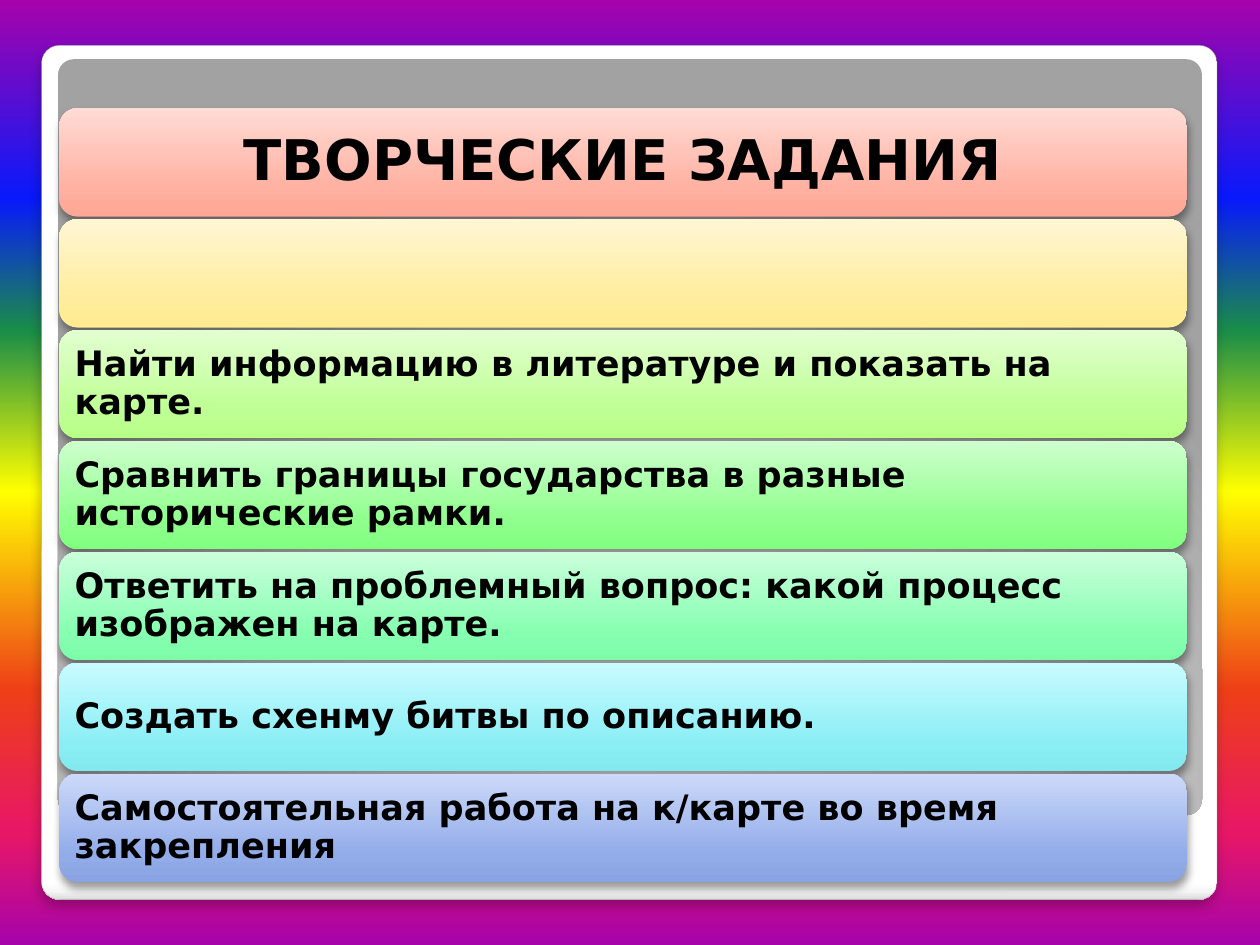
"""Build a slide with a stack of gradient cards listing creative map tasks."""
from lxml.etree import SubElement
from pptx import Presentation
from pptx.dml.color import RGBColor
from pptx.enum.shapes import MSO_SHAPE
from pptx.enum.text import MSO_ANCHOR, PP_ALIGN
from pptx.oxml.ns import qn
from pptx.util import Inches, Pt

WIDTH, HEIGHT = 10, 7.5
COLORS = {"text": "000000", "shadow": "000000", "frame_line": "A4A4A4"}
GRADIENTS = {
    "rainbow": [(0, "A603AB"), (21, "0819FB"), (35, "1A8D48"), (52, "FFFF00"),
                (73, "EE3F17"), (88, "E81766"), (100, "A603AB")],
    "frame": [(0, "FFFFFF"), (98, "FFFFFF"), (99, "F7F7F7"), (100, "DADADA")],
    "panel": [(0, "FFFFFF"), (55, "E1E1E1"), (100, "A2A2A2")],
}
CARDS = [
    ("ТВОРЧЕСКИЕ ЗАДАНИЯ", ("FFA796", "FFB0A0", "FFDCD6")),
    ("", ("FFEB90", "FFED9B", "FFF6D4")),
    ("Найти информацию в литературе и показать на карте.",
     ("B8FF88", "BEFF93", "E2FFD0")),
    ("Сравнить границы государства в разные исторические рамки.",
     ("81FF80", "8EFF8C", "CEFFCD")),
    ("Ответить на проблемный вопрос: какой процесс изображен на карте.",
     ("7CFCA9", "86FFB0", "CBFFDC")),
    ("Создать схенму битвы по описанию.", ("83E8EF", "8BEEF5", "C8FBFF")),
    ("Самостоятельная работа на к/карте во время закрепления",
     ("8AA4E3", "92ACE9", "CCD9F9")),
]
CARD_STOPS = (0, 25, 100)
CARD_LEFT, CARD_TOP, CARD_WIDTH, CARD_HEIGHT = 0.47, 0.86, 8.95, 0.86
CARD_PITCH = 0.88
TITLE = {"size": 32, "inset": 0.13, "align": PP_ALIGN.CENTER}
TASK = {"size": 20, "inset": 0.08, "align": PP_ALIGN.LEFT}
FONT = {"name": "DejaVu Sans", "bold": True}


def set_gradient(fill, element, stops, angle=90, focus=None):
    fill.gradient()
    grad = next(element.iter(qn("a:gradFill")))
    for child in list(grad):
        grad.remove(child)
    stop_list = SubElement(grad, qn("a:gsLst"))
    for position, color in stops:
        stop = SubElement(stop_list, qn("a:gs"), pos=str(position * 1000))
        SubElement(stop, qn("a:srgbClr"), val=color)
    if focus:
        shade = SubElement(grad, qn("a:path"), {"path": "circle"})
        SubElement(shade, qn("a:fillToRect"),
                   {side: str(share * 1000) for side, share in zip("ltrb", focus)})
    else:
        SubElement(grad, qn("a:lin"), ang=str(angle * 60000), scaled="0")


def add_shadow(sp, alpha, blur, distance):
    effects = sp._element.spPr.find(qn("a:effectLst"))
    shadow = SubElement(effects, qn("a:outerShdw"), blurRad=str(Pt(blur)),
                        dist=str(Pt(distance)), dir="5400000", rotWithShape="0")
    color = SubElement(shadow, qn("a:srgbClr"), val=COLORS["shadow"])
    SubElement(color, qn("a:alpha"), val=str(alpha * 1000))


def add_box(s, box, stops, radius=None, **gradient):
    sp = s.shapes.add_shape(MSO_SHAPE.ROUNDED_RECTANGLE, *map(Inches, box))
    if radius:
        sp.adjustments[0] = radius
    set_gradient(sp.fill, sp._element.spPr, stops, **gradient)
    sp.line.fill.background()
    sp.shadow.inherit = False
    return sp


def write(sp, text, style):
    tf = sp.text_frame
    tf.word_wrap = True
    tf.vertical_anchor = MSO_ANCHOR.MIDDLE
    for side in ("left", "top", "right", "bottom"):
        setattr(tf, f"margin_{side}", Inches(style["inset"]))
    p = tf.paragraphs[0]
    p.alignment, p.line_spacing = style["align"], 0.9
    r = p.add_run()
    r.text = text
    for name, value in {**FONT, "size": Pt(style["size"])}.items():
        setattr(r.font, name, value)
    r.font.color.rgb = RGBColor.from_string(COLORS["text"])


def main():
    prs = Presentation()
    prs.slide_width, prs.slide_height = Inches(WIDTH), Inches(HEIGHT)
    s = prs.slides.add_slide(prs.slide_layouts[6])
    set_gradient(s.background.fill, s._element, GRADIENTS["rainbow"])

    frame = add_box(s, (0.33, 0.36, 9.33, 6.78), GRADIENTS["frame"], 0.021)
    frame.line.color.rgb = RGBColor.from_string(COLORS["frame_line"])
    frame.line.width = Pt(0.16)
    add_shadow(frame, 25, 6, 4)
    add_box(s, (0.46, 0.47, 9.08, 6), GRADIENTS["panel"], 0.021,
            focus=(50, 175, 50, -75))

    for row, (text, colors) in enumerate(CARDS):
        box = (CARD_LEFT, CARD_TOP + row * CARD_PITCH, CARD_WIDTH, CARD_HEIGHT)
        card = add_box(s, box, zip(CARD_STOPS, colors), angle=270)
        add_shadow(card, 40, 5.2, 3)
        if text:
            write(card, text, TASK if row else TITLE)

    prs.save("out.pptx")


if __name__ == "__main__":
    main()
